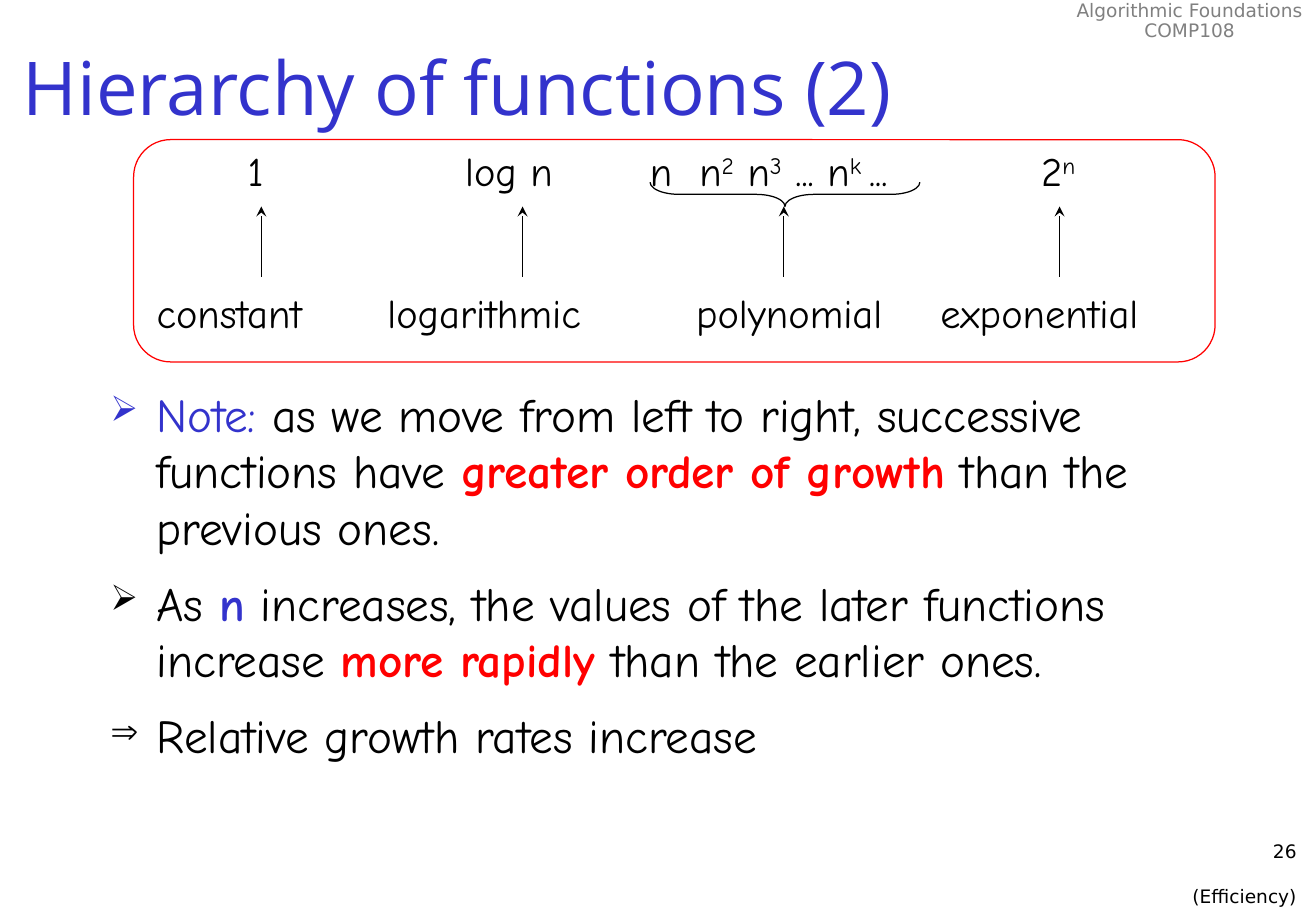
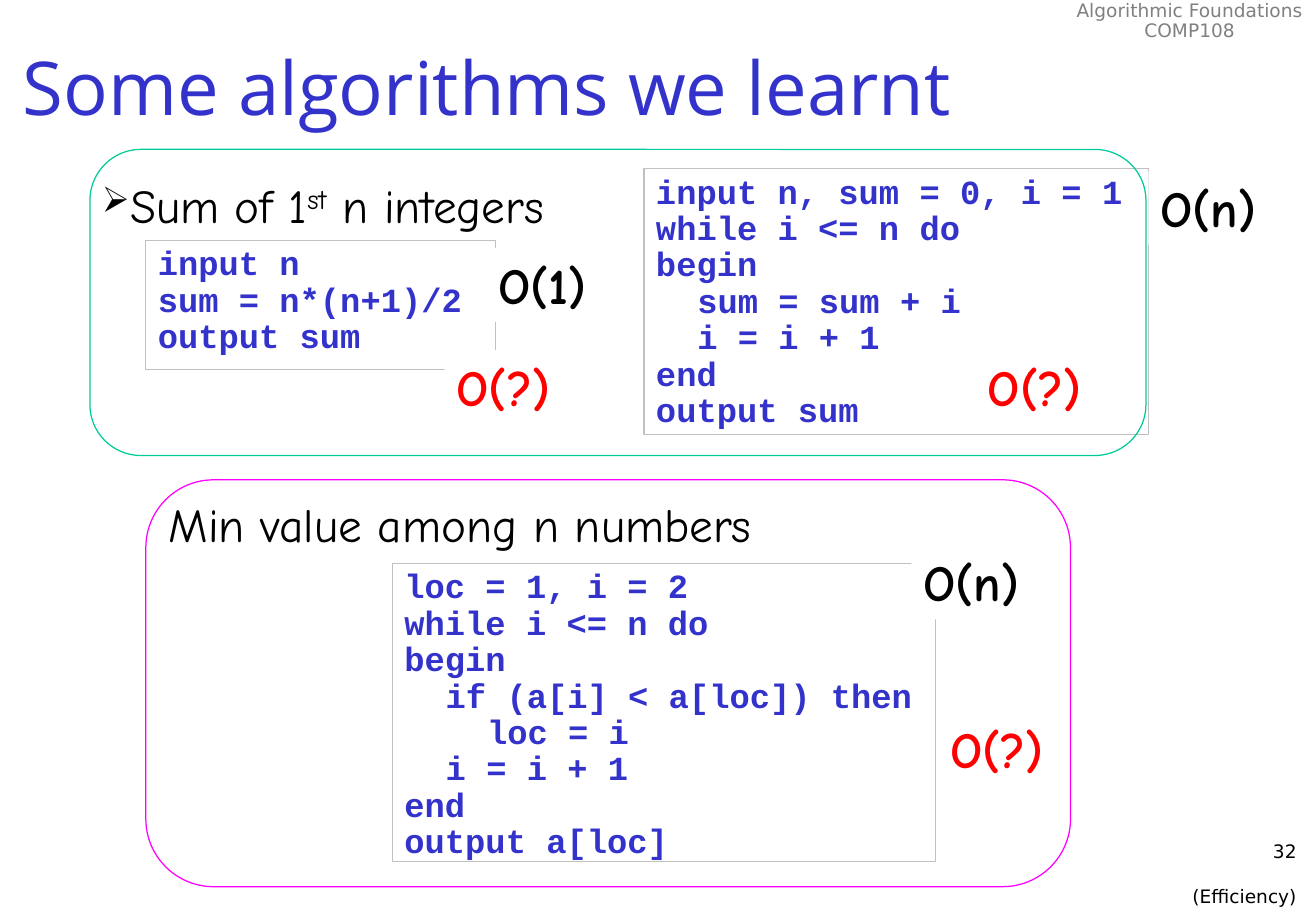
from lxml.etree import SubElement
from pptx import Presentation
from pptx.dml.color import RGBColor
from pptx.enum.shapes import MSO_CONNECTOR, MSO_SHAPE
from pptx.enum.text import MSO_ANCHOR, PP_ALIGN
from pptx.oxml.ns import qn
from pptx.util import Pt

PX = 9144  # 100 px to the inch
BLACK = RGBColor(0x00, 0x00, 0x00)
WHITE = RGBColor(0xFF, 0xFF, 0xFF)
GRAY = RGBColor(0x80, 0x80, 0x80)
SILVER = RGBColor(0xC0, 0xC0, 0xC0)
BLUE = RGBColor(0x33, 0x33, 0xCC)
RED = RGBColor(0xFF, 0x00, 0x00)
GREEN = RGBColor(0x00, 0xCC, 0x99)
MAGENTA = RGBColor(0xFF, 0x00, 0xFF)
HAND, CODE, SMALL, HEADING = "Comic Neue", "Courier New", "DejaVu Sans", "Open Sans"
CODE_CHAR = 17


def outline(slide, kind, box, color, fill=None):
    """Add a preset shape with a thin line, or with none if color is None."""
    shape = slide.shapes.add_shape(kind, *(PX * v for v in box))
    shape.shadow.inherit = False
    if fill is None:
        shape.fill.background()
    else:
        shape.fill.solid()
        shape.fill.fore_color.rgb = fill
    if color is None:
        shape.line.fill.background()
    else:
        shape.line.color.rgb = color
        shape.line.width = Pt(0.75)
    return shape


def text(slide, box, paragraphs, size=24, font=HAND, color=BLACK, bold=False,
         align=PP_ALIGN.LEFT, anchor=MSO_ANCHOR.TOP, wrap=True, spacing=None,
         before=0, after=0, bullets="", hang=0, fill=None, line=None):
    """Add text; a paragraph is a string or a list of strings and (string, format) runs.

    Leading spaces of a plain string become a left indent.
    """
    if fill is None and line is None:
        shape = slide.shapes.add_textbox(*(PX * v for v in box))
    else:
        shape = outline(slide, MSO_SHAPE.RECTANGLE, box, line, fill)
    frame = shape.text_frame
    frame.word_wrap = wrap
    frame.vertical_anchor = anchor
    for i, runs in enumerate(paragraphs):
        paragraph = frame.paragraphs[0] if i == 0 else frame.add_paragraph()
        paragraph.alignment = align
        paragraph.line_spacing = spacing
        paragraph.space_before, paragraph.space_after = Pt(before), Pt(after)
        properties = paragraph._p.get_or_add_pPr()
        indent = hang
        if isinstance(runs, str):
            indent += CODE_CHAR * (len(runs) - len(runs.lstrip()))
            runs = [runs.lstrip()]
        properties.set("marL", str(PX * indent))
        properties.set("indent", str(-PX * hang))
        if bullets:
            SubElement(properties, qn("a:buSzPct")).set("val", "75000")
            SubElement(properties, qn("a:buChar")).set("char", bullets[i])
        for piece in runs:
            content, look = (piece, {}) if isinstance(piece, str) else piece
            run = paragraph.add_run()
            run.text = content
            run.font.size, run.font.name = Pt(size), font
            run.font.bold = look.get("bold", bold)
            run.font.color.rgb = look.get("color", color)
            if "baseline" in look:
                run.font._element.set("baseline", look["baseline"])


deck = Presentation()
deck.slide_width, deck.slide_height = 1083 * PX, 750 * PX

slides = []
for title, number in [("Hierarchy of functions (2)", "26"),
                      ("Some algorithms we learnt", "32")]:
    slide = deck.slides.add_slide(deck.slide_layouts[6])
    text(slide, (875, -4, 208, 43), ["Algorithmic Foundations", "COMP108"], size=11,
         font=SMALL, color=GRAY, align=PP_ALIGN.CENTER, spacing=0.9, wrap=False)
    text(slide, (851, 687, 226, 50), [number, "(Efficiency)"], size=11, font=SMALL,
         align=PP_ALIGN.RIGHT, after=13)
    text(slide, (9, 8, 1074, 125), [title], size=44, font=HEADING, color=BLUE,
         anchor=MSO_ANCHOR.MIDDLE)
    slides.append(slide)
hierarchy, algorithms = slides

# Hierarchy of functions
SUPER = {"baseline": "30000"}
KEY = {"color": RED, "bold": True}
BODY = {"size": 28, "before": 5.6, "after": 5.6}
text(hierarchy, (81, 312, 910, 417), [
    [("Note:", {"color": BLUE}), " as we move from left to right, successive functions have ",
     ("greater order of growth", KEY), " than the previous ones."],
    ["As ", ("n", {"color": BLUE, "bold": True}),
     " increases, the values of the later functions increase ",
     ("more rapidly", KEY), " than the earlier ones."],
    "Relative growth rates increase",
], bullets="➢➢⇒", hang=38, **BODY)

polynomials = ["n  n", ("2", SUPER), " n", ("3", SUPER), " ... n", ("k ", SUPER), "..."]
classes = [
    # function, left, width, wrap, arrow x, name, left, width
    (["1"], 194, 35, False, 215, "constant", 119, 156),
    (["log n"], 373, 93, False, 430, "logarithmic", 309, 196),
    (polynomials, 525, 307, True, 645, "polynomial", 563, 180),
    (["2", ("n", SUPER)], 847, 81, True, 872, "exponential", 764, 200),
]
for function, left, width, wrap, arrow_x, name, name_left, name_width in classes:
    text(hierarchy, (left, 115, width, 51), [function], wrap=wrap)
    text(hierarchy, (name_left, 232, name_width, 51), [name], wrap=False)
    arrow = hierarchy.shapes.add_connector(
        MSO_CONNECTOR.STRAIGHT, arrow_x * PX, 228 * PX, arrow_x * PX, 170 * PX)
    arrow.line.color.rgb = BLACK
    arrow.line.width = Pt(0.75)
    SubElement(arrow.get_or_add_ln(), qn("a:tailEnd")).set("type", "stealth")
    SubElement(arrow._element.spPr, qn("a:effectLst"))

brace = outline(hierarchy, MSO_SHAPE.LEFT_BRACE, (636, 49, 20, 222), BLACK)
brace.rotation = 270
brace.adjustments[0] = 1.19
outline(hierarchy, MSO_SHAPE.ROUNDED_RECTANGLE, (110, 115, 890, 183), RED)

# Some algorithms we learnt
LISTING = {"size": 20, "font": CODE, "color": BLUE, "bold": True, "spacing": 0.9,
           "line": SILVER}
ORDER = {"size": 30, "bold": True, "wrap": False, "fill": WHITE}

text(algorithms, (74, 140, 596, 142), [["Sum of 1", ("st", SUPER), " n integers"]],
     bullets="➢", **BODY)
text(algorithms, (530, 139, 415, 219), [
    "input n, sum = 0, i = 1",
    "while i <= n do",
    "begin",
    "  sum = sum + i",
    "  i = i + 1",
    "end",
    "output sum",
], fill=WHITE, **LISTING)
text(algorithms, (803, 288, 109, 61), ["O(?)"], color=RED, **ORDER)
text(algorithms, (120, 198, 288, 106), ["input n", "sum = n*(n+1)/2", "output sum"],
     fill=WHITE, **LISTING)
text(algorithms, (366, 288, 109, 61), ["O(?)"], color=RED, **ORDER)
text(algorithms, (323, 464, 447, 245), [
    "loc = 1, i = 2",
    "while i <= n do",
    "begin",
    "  if (a[i] < a[loc]) then",
    "    loc = i",
    "  i = i + 1",
    "end",
    "output a[loc]",
], **LISTING)
text(algorithms, (129, 403, 606, 167), ["Min value among n numbers"], **BODY)
text(algorithms, (772, 586, 109, 61), ["O(?)"], color=RED, **ORDER)

for box, color in [((74, 123, 869, 252), GREEN), ((120, 395, 761, 335), MAGENTA)]:
    outline(algorithms, MSO_SHAPE.ROUNDED_RECTANGLE, box, color)
for left, top, answer in [(945, 141, "O(n)"), (750, 449, "O(n)"), (400, 204, "O(1)")]:
    text(algorithms, (left, top, 108, 61), [answer], **ORDER)

deck.save("out.pptx")
